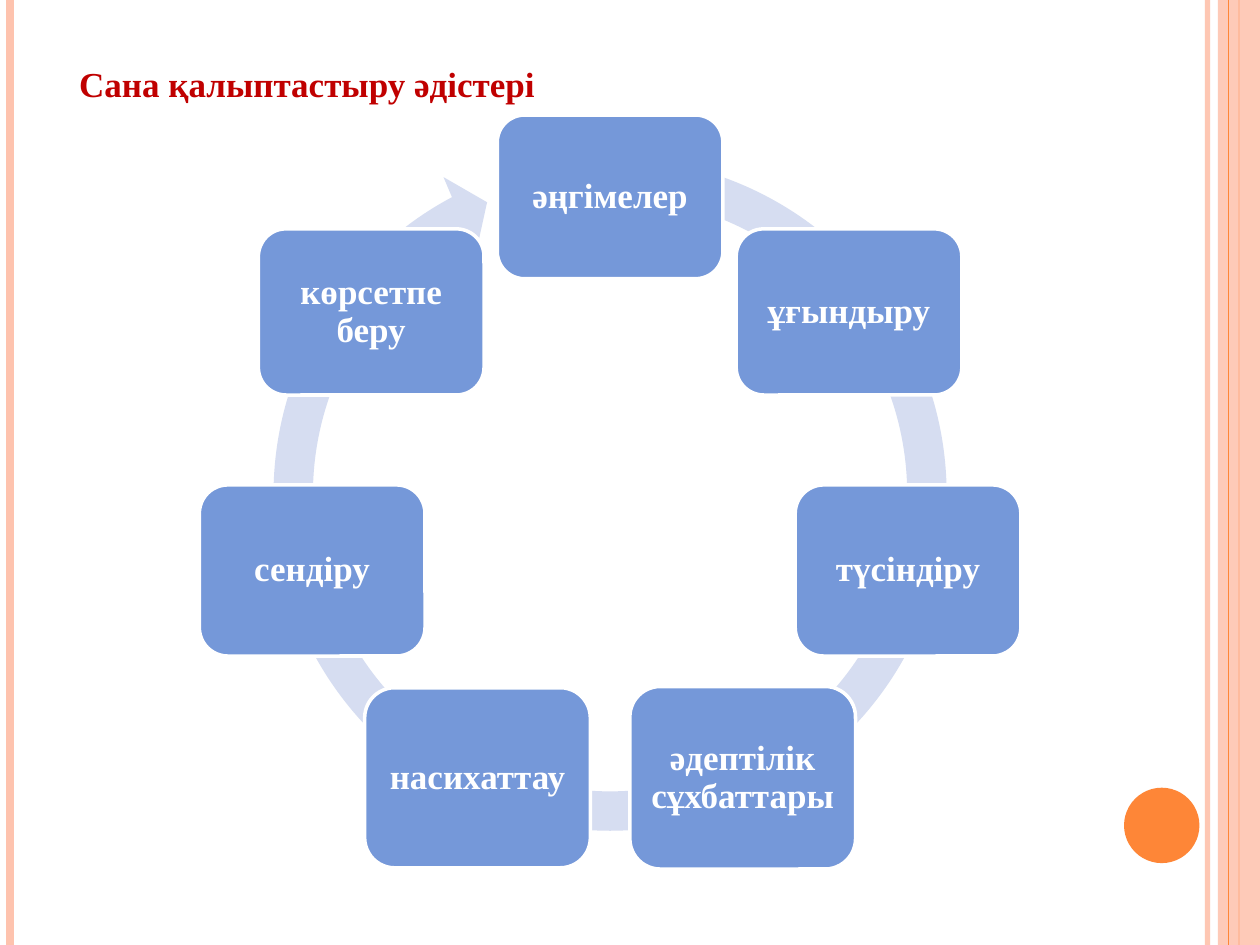
import math

from lxml import etree
from pptx import Presentation
from pptx import util as u
from pptx.dml.color import RGBColor
from pptx.enum import shapes, text
from pptx.oxml import ns

PEACH = RGBColor(0xFE, 0xC3, 0xAE)
ORANGE = RGBColor(0xFE, 0x86, 0x37)
BLUE = RGBColor(0x75, 0x98, 0xD9)
PALE_BLUE = RGBColor(0xD6, 0xDD, 0xF1)
WHITE = RGBColor(0xFF, 0xFF, 0xFF)
RED = RGBColor(0xC0, 0x00, 0x00)

SLIDE_W, SLIDE_H = 25.4, 19.05
FONT = {"name": "Times New Roman", "size": u.Pt(20), "bold": True}

# Method and height of its box, clockwise from the top
METHODS = [
    ("əңгімелер", 3.3),
    ("ұғындыру", 3.35),
    ("түсіндіру", 3.45),
    ("əдептілік сұхбаттары", 3.68),
    ("насихаттау", 3.63),
    ("сендіру", 3.45),
    ("көрсетпе беру", 3.35),
]


def apply(obj, values):
    for name, value in values.items():
        setattr(obj, name, value)


def set_alpha(element, percent):
    color = element.find(".//" + ns.qn("a:srgbClr"))
    etree.SubElement(color, ns.qn("a:alpha"), val=str(percent * 1000))


def add_shape(parent, kind, x, y, w, h, fill):
    sp = parent.add_shape(kind, u.Cm(x), u.Cm(y), u.Cm(w), u.Cm(h))
    sp.shadow.inherit = False
    sp.fill.solid()
    sp.fill.fore_color.rgb = fill
    sp.line.fill.background()
    return sp


def add_rule(slide, x, top, height, color, width, alpha=None):
    line = slide.shapes.add_connector(
        shapes.MSO_CONNECTOR.STRAIGHT, u.Cm(x), u.Cm(top), u.Cm(x), u.Cm(top + height))
    line.line.color.rgb = color
    line.line.width = u.Pt(width)
    if alpha:
        set_alpha(line._element.spPr, alpha)
    etree.SubElement(line._element.spPr, ns.qn("a:effectLst"))


def add_frame(slide, x, y, w, h):
    """Vertical stripes along both edges and the disc at lower right."""
    right = x + w
    add_rule(slide, right - 1.06, y, h, PEACH, 3, 93)
    add_rule(slide, x + 0.21, y, h, PEACH, 4.5)
    add_rule(slide, right - 0.42, y, h, ORANGE, 1.5)
    band = add_shape(slide.shapes, shapes.MSO_SHAPE.RECTANGLE,
                     right - 0.85, y, 0.85, h, PEACH)
    set_alpha(band._element.spPr, 87)
    add_rule(slide, right - 0.64, y, h, ORANGE, 0.75)
    add_shape(slide.shapes, shapes.MSO_SHAPE.OVAL,
              right - 2.74, y + 15.88, 1.52, 1.52, ORANGE)


def add_title(slide, x, y, w, h):
    title = slide.shapes.title
    apply(title, {"left": u.Cm(x), "top": u.Cm(y), "width": u.Cm(w), "height": u.Cm(h)})
    tf = title.text_frame
    tf.text = "Сана қалыптастыру əдістері"
    apply(tf, {"word_wrap": False, "vertical_anchor": text.MSO_ANCHOR.TOP,
               "auto_size": text.MSO_AUTO_SIZE.SHAPE_TO_FIT_TEXT})
    p = tf.paragraphs[0]
    p.alignment = text.PP_ALIGN.LEFT
    apply(p.runs[0].font, FONT)
    p.runs[0].font.color.rgb = RED


def add_method(parent, cx, cy, w, h, label):
    """Rounded box centred on the given point."""
    sp = add_shape(parent, shapes.MSO_SHAPE.ROUNDED_RECTANGLE,
                   cx - w / 2, cy - h / 2, w, h, BLUE)
    sp.line.color.rgb = WHITE
    sp.line.width = u.Pt(2)
    tf = sp.text_frame
    tf.text = label
    inset = u.Cm(0.15)
    apply(tf, {"word_wrap": True, "vertical_anchor": text.MSO_ANCHOR.MIDDLE,
               "margin_left": inset, "margin_right": inset,
               "margin_top": inset, "margin_bottom": inset})
    p = tf.paragraphs[0]
    apply(p, {"alignment": text.PP_ALIGN.CENTER, "line_spacing": 0.9})
    apply(p.runs[0].font, FONT)
    p.runs[0].font.color.rgb = WHITE


def add_cycle(slide, x, y, w, h):
    """Circular arrow with the methods spaced evenly around it."""
    group = slide.shapes.add_group_shape().shapes
    cx = x + w / 2

    # Ring
    ring = 14.45
    arrow = add_shape(group, shapes.MSO_SHAPE.CIRCULAR_ARROW,
                      cx - ring / 2, y + 0.42, ring, ring, PALE_BLUE)
    for i, value in enumerate([0.055, 3.307, 144.989, 169.599, 0.058]):
        arrow.adjustments[i] = value

    # Boxes
    box_w, radius = 4.55, 6.16
    cy = y + METHODS[0][1] / 2 + radius
    for i, (label, box_h) in enumerate(METHODS):
        angle = 2 * math.pi * i / len(METHODS)
        add_method(group, cx + radius * math.sin(angle),
                   cy - radius * math.cos(angle), box_w, box_h, label)


def main():
    prs = Presentation()
    prs.slide_width, prs.slide_height = u.Cm(SLIDE_W), u.Cm(SLIDE_H)
    slide = prs.slides.add_slide(prs.slide_layouts[5])
    add_frame(slide, 0, 0, SLIDE_W, SLIDE_H)
    add_cycle(slide, 4, 2.32, 16.6, 15.2)
    add_title(slide, 1.34, 1.13, 9.96, 1.12)
    prs.save("out.pptx")


if __name__ == "__main__":
    main()
